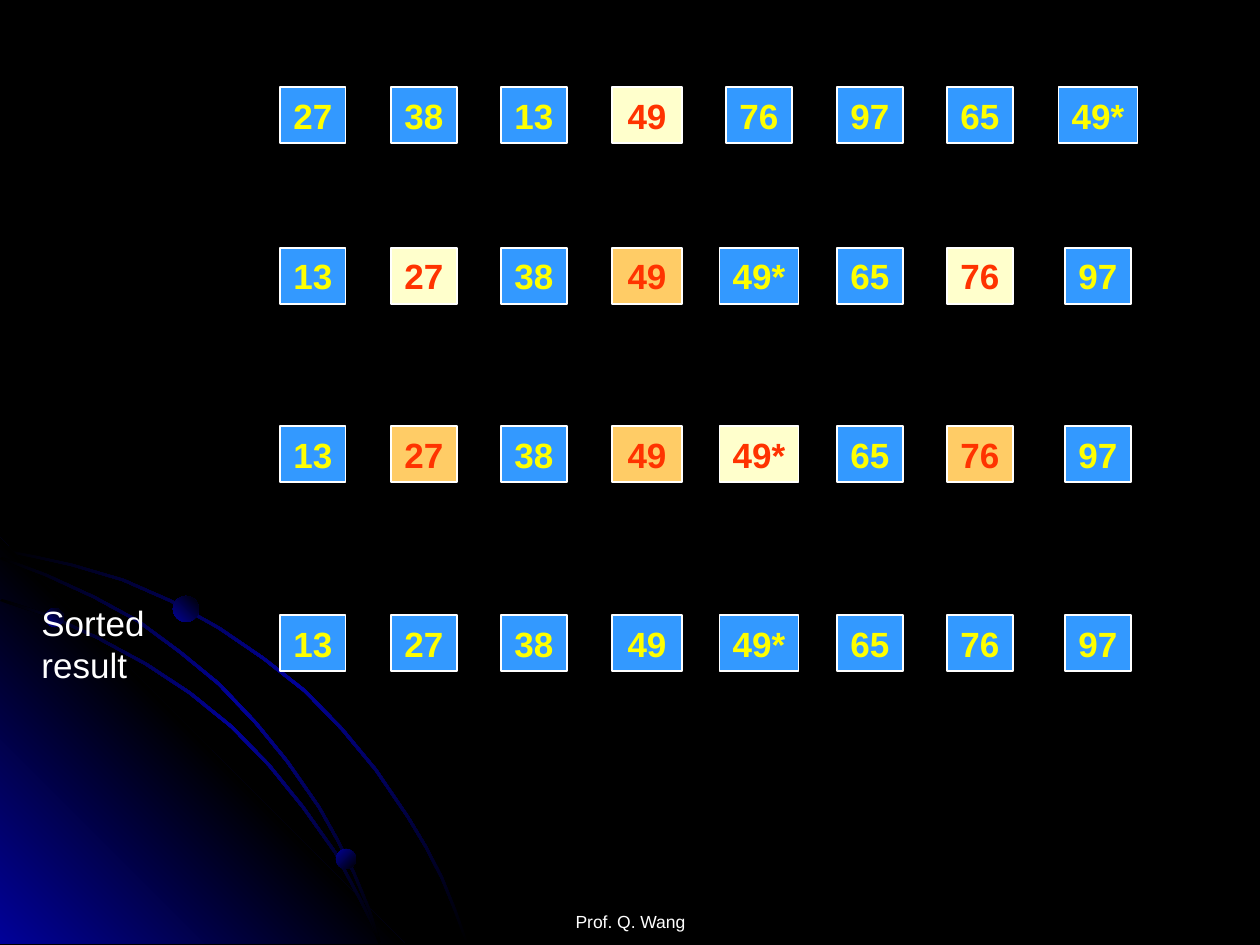
"""Build a slide that shows the steps of a quicksort on eight numbers."""
from dataclasses import dataclass

from pptx import Presentation
from pptx.dml.color import RGBColor
from pptx.enum.shapes import MSO_SHAPE
from pptx.enum.text import MSO_ANCHOR, MSO_AUTO_SIZE, PP_ALIGN
from pptx.oxml import parse_xml
from pptx.oxml.ns import nsdecls
from pptx.util import Pt

RECTANGLE, OVAL = MSO_SHAPE.RECTANGLE, MSO_SHAPE.OVAL
LEFT, CENTER = PP_ALIGN.LEFT, PP_ALIGN.CENTER
TOP, MIDDLE, BOTTOM = MSO_ANCHOR.TOP, MSO_ANCHOR.MIDDLE, MSO_ANCHOR.BOTTOM
FIT_SHAPE = MSO_AUTO_SIZE.SHAPE_TO_FIT_TEXT


@dataclass(frozen=True)
class Theme:
    font: str = "Arial"
    black: str = "000000"
    white: str = "FFFFFF"
    glow: str = "010199"
    plain: tuple = ("3399FF", "FFFF00")
    pivot: tuple = ("FFFFCC", "FF3300")
    placed: tuple = ("FFCC66", "FF3300")
    body_size: int = 20
    footer_size: int = 10


THEME = Theme()
SCALE = 914400 / 126

STEPS = [
    {"top": 87, "values": "27 38 13 49 76 97 65 49*", "pivots": [3], "placed": []},
    {"top": 248, "values": "13 27 38 49 49* 65 76 97", "pivots": [1, 6], "placed": [3]},
    {"top": 426, "values": "13 27 38 49 49* 65 76 97", "pivots": [4], "placed": [1, 3, 6]},
    {"top": 615, "values": "13 27 38 49 49* 65 76 97", "pivots": [], "placed": []},
]
COLUMN_CENTERS = [313, 424, 534, 647, 759, 870, 980, 1098]
CELL_HEIGHT, CELL_WIDTH, STAR_WIDTH, MIDDLE_WIDTH = 56, 66, 79, 70
MIDDLE_COLUMN = 3
RESULT_LABEL = ["Sorted", "result"]
FOOTER = ["Prof. Q. Wang"]

OUTER_ARC = [(0, 551), (35, 558), (71, 566), (122, 581), (170, 602), (218, 629),
             (262, 659), (304, 692), (341, 730), (375, 771), (407, 818), (425, 848),
             (441, 879), (454, 911), (466, 944)]
MIDDLE_ARC = [(0, 559), (45, 576), (93, 598), (137, 622), (179, 653), (218, 685),
              (255, 724), (286, 762), (318, 808), (336, 840), (353, 874), (368, 910),
              (379, 944)]
INNER_ARC = [(0, 601), (49, 617), (97, 639), (145, 665), (189, 694), (231, 728),
             (268, 766), (302, 808), (334, 853), (359, 900), (370, 922), (379, 944)]
CORNER = [(405, 944), (0, 944), (0, 538)]
ORBS = [(45, 608, 19, 315), (336, 849, 20, 45), (173, 596, 26, 315)]
ARC_THICKNESS = 2


def px(*lengths):
    return [round(length * SCALE) for length in lengths]


def color(value):
    return RGBColor.from_string(value)


def apply_gradient(shape, colors, angle):
    stops = "".join(
        f'<a:gs pos="{round(100000 * index / (len(colors) - 1))}">'
        f'<a:srgbClr val="{value}"/></a:gs>'
        for index, value in enumerate(colors))
    gradient = parse_xml(
        f'<a:gradFill {nsdecls("a")} rotWithShape="1"><a:gsLst>{stops}</a:gsLst>'
        f'<a:lin ang="{angle * 60000}" scaled="1"/></a:gradFill>')
    shape.element.spPr.insert(2, gradient)
    shape.line.fill.background()
    shape.shadow.inherit = False


def add_outline(slide, points, colors, angle):
    builder = slide.shapes.build_freeform(*points[0], scale=SCALE)
    builder.add_line_segments(points[1:], close=True)
    apply_gradient(builder.convert_to_shape(), colors, angle)


def add_arc(slide, edge):
    far_edge = [(x + ARC_THICKNESS, y - ARC_THICKNESS) for x, y in reversed(edge)]
    add_outline(slide, edge + far_edge, [THEME.black, THEME.glow, THEME.black], 45)


def add_backdrop(slide):
    add_arc(slide, OUTER_ARC)
    add_outline(slide, CORNER, [THEME.glow, THEME.black, THEME.glow], 315)
    add_arc(slide, INNER_ARC)
    add_arc(slide, MIDDLE_ARC)
    for left, top, diameter, angle in ORBS:
        orb = slide.shapes.add_shape(OVAL, *px(left, top, diameter, diameter))
        apply_gradient(orb, [THEME.glow, THEME.black], angle)


def write_text(shape, lines, size, text_color, alignment, anchor, bold=False):
    frame = shape.text_frame
    frame.word_wrap = False
    frame.vertical_anchor = anchor
    for index, line in enumerate(lines):
        paragraph = frame.add_paragraph() if index else frame.paragraphs[0]
        paragraph.alignment = alignment
        run = paragraph.add_run()
        run.text = line
        run.font.name = THEME.font
        run.font.size = Pt(size)
        run.font.bold = bold
        run.font.color.rgb = color(text_color)


def add_cell(slide, value, column, top, style):
    width = MIDDLE_WIDTH if column == MIDDLE_COLUMN else CELL_WIDTH
    if value.endswith("*"):
        width = STAR_WIDTH
    left = COLUMN_CENTERS[column] - width / 2
    cell = slide.shapes.add_shape(RECTANGLE, *px(left, top, width, CELL_HEIGHT))
    fill_color, text_color = style
    cell.shadow.inherit = False
    cell.fill.solid()
    cell.fill.fore_color.rgb = color(fill_color)
    cell.line.color.rgb = color(THEME.white)
    cell.line.width = Pt(0.75)
    write_text(cell, [value], THEME.body_size, text_color, CENTER, MIDDLE, bold=True)
    cell.text_frame.auto_size = FIT_SHAPE


def add_step(slide, step):
    for column, value in enumerate(step["values"].split()):
        style = THEME.plain
        if column in step["pivots"]:
            style = THEME.pivot
        elif column in step["placed"]:
            style = THEME.placed
        add_cell(slide, value, column, step["top"], style)


def main():
    presentation = Presentation()
    presentation.slide_width, presentation.slide_height = px(1260, 945)
    slide = presentation.slides.add_slide(presentation.slide_layouts[6])
    slide.background.fill.solid()
    slide.background.fill.fore_color.rgb = color(THEME.black)
    add_backdrop(slide)

    footer = slide.shapes.add_textbox(*px(431, 869, 399, 63))
    write_text(footer, FOOTER, THEME.footer_size, THEME.white, CENTER, BOTTOM)
    footer.text_frame.word_wrap = True
    footer.text_frame.margin_bottom = 0

    for step in STEPS:
        add_step(slide, step)

    label = slide.shapes.add_textbox(*px(29, 595, 137, 97))
    write_text(label, RESULT_LABEL, THEME.body_size, THEME.white, LEFT, TOP)
    label.text_frame.auto_size = FIT_SHAPE
    presentation.save("out.pptx")


if __name__ == "__main__":
    main()
